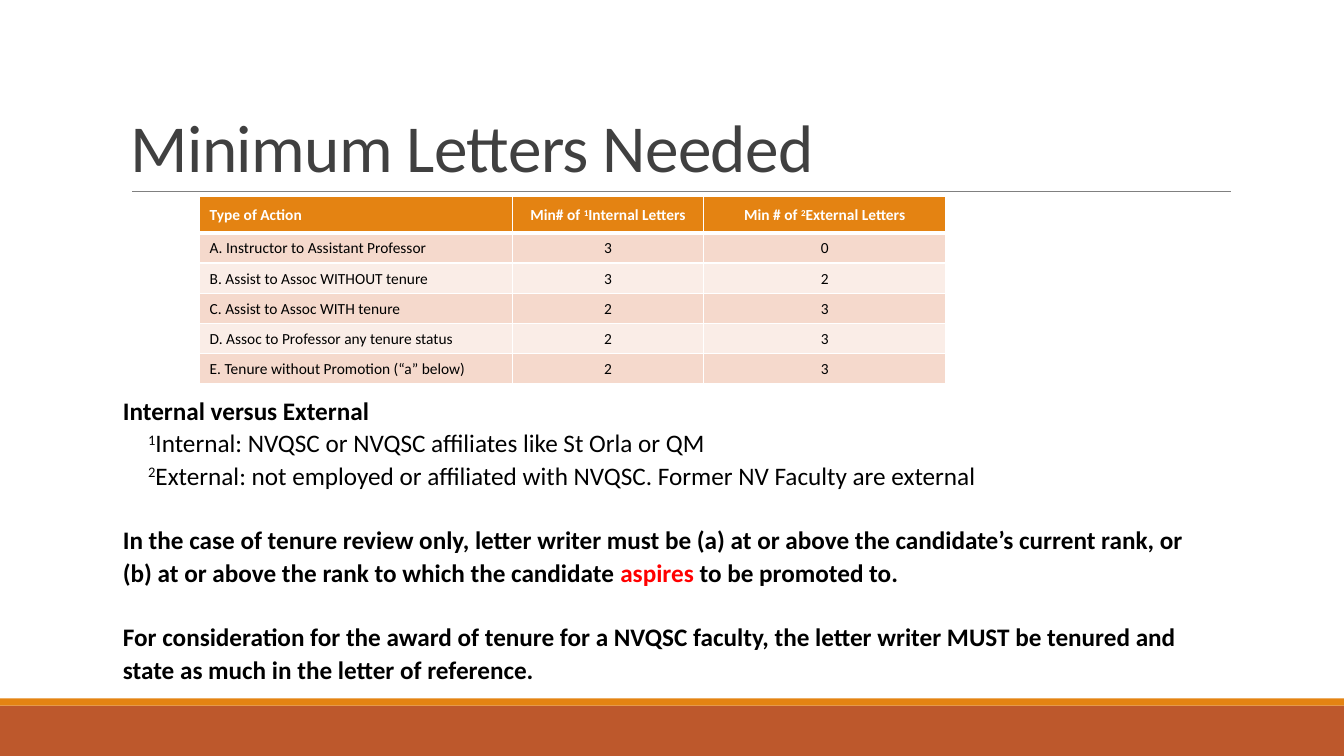
from lxml.etree import SubElement
from pptx import Presentation
from pptx.dml.color import RGBColor
from pptx.enum.shapes import MSO_CONNECTOR, MSO_SHAPE
from pptx.enum.text import MSO_ANCHOR, PP_ALIGN
from pptx.oxml.ns import qn
from pptx.util import Inches, Pt

FONT = "Calibri"
BLACK = RGBColor(0x00, 0x00, 0x00)
WHITE = RGBColor(0xFF, 0xFF, 0xFF)
RED = RGBColor(0xFF, 0x00, 0x00)
GRAY = RGBColor(0x80, 0x80, 0x80)
CHARCOAL = RGBColor(0x40, 0x40, 0x40)
ORANGE = RGBColor(0xE4, 0x83, 0x12)
RUST = RGBColor(0xBD, 0x58, 0x2C)
BANDS = (RGBColor(0xF5, 0xD9, 0xCC), RGBColor(0xFA, 0xED, 0xE7))

# Content: a run is (text, style), style being "", "super" or "red"
TITLE = "Minimum Letters Needed"
HEADER = [
    [("Type of Action", "")],
    [("Min# of ", ""), ("1", "super"), ("Internal Letters", "")],
    [("Min # of ", ""), ("2", "super"), ("External Letters", "")],
]
ACTIONS = [
    ("A. Instructor to Assistant Professor", "3", "0"),
    ("B. Assist to Assoc WITHOUT tenure", "3", "2"),
    ("C. Assist to Assoc WITH tenure", "2", "3"),
    ("D. Assoc to Professor any tenure status", "2", "3"),
    ("E. Tenure without Promotion (“a” below)", "2", "3"),
]
# Notes: (runs, bold, left indent in inches, space before in points)
SECTION_GAP = 23.2
NOTES = [
    ([("Internal versus External", "")], True, 0, 0),
    ([("1", "super"), ("Internal: NVQSC or NVQSC affiliates like St Orla or QM", "")],
     False, 0.25, 0),
    ([("2", "super"),
      ("External: not employed or affiliated with NVQSC. Former NV Faculty are external", "")],
     False, 0.25, 0),
    ([("In the case of tenure review only, letter writer must be (a) at or above "
       "the candidate’s current rank, or", "")], True, 0, SECTION_GAP),
    ([("(b) at or above the rank to which the candidate ", ""), ("aspires ", "red"),
      ("to be promoted to.", "")], True, 0, 0),
    ([("For consideration for the award of tenure for a NVQSC faculty, the letter writer "
       "MUST be tenured and state as much in the letter of reference.", "")],
     True, 0, SECTION_GAP),
]

# Layout in inches
WIDTH, HEIGHT = 13.33, 7.5
COLUMN_WIDTHS = (3.1, 1.9, 2.4)
HEADER_HEIGHT, ROW_HEIGHT = 0.36, 0.3
FOOTER_BANDS = [(7, 0.5, RUST), (6.93, 0.07, ORANGE)]


def add_runs(paragraph, runs, size, color, bold=False):
    for text, style in runs:
        run = paragraph.add_run()
        run.text = text
        run.font.name = FONT
        run.font.size = Pt(size)
        run.font.bold = bold
        run.font.color.rgb = RED if style == "red" else color
        if style == "super":
            run.font._element.set("baseline", "30000")


def add_text_frame(slide, left, top, width, height, anchor):
    box = slide.shapes.add_textbox(Inches(left), Inches(top), Inches(width), Inches(height))
    box.text_frame.word_wrap = True
    box.text_frame.vertical_anchor = anchor
    return box.text_frame


def add_border(cell, side, points):
    line = SubElement(cell._tc.get_or_add_tcPr(), qn(f"a:ln{side}"), w=str(Pt(points)))
    fill = SubElement(line, qn("a:solidFill"))
    SubElement(fill, qn("a:srgbClr"), val=str(WHITE))


def fill_cell(cell, runs, row, column):
    is_header = row == 0
    for side in "LRTB":
        heavy = (is_header and side == "B") or (row == 1 and side == "T")
        add_border(cell, side, 3 if heavy else 1)
    cell.fill.solid()
    cell.fill.fore_color.rgb = ORANGE if is_header else BANDS[(row - 1) % 2]
    cell.vertical_anchor = MSO_ANCHOR.MIDDLE
    paragraph = cell.text_frame.paragraphs[0]
    paragraph.alignment = PP_ALIGN.CENTER if column else PP_ALIGN.LEFT
    paragraph.line_spacing = 1.07
    add_runs(paragraph, runs, 11, WHITE if is_header else BLACK, is_header)


def main():
    presentation = Presentation()
    presentation.slide_width = Inches(WIDTH)
    presentation.slide_height = Inches(HEIGHT)
    slide = presentation.slides.add_slide(presentation.slide_layouts[6])

    # Footer bands
    for top, height, color in FOOTER_BANDS:
        band = slide.shapes.add_shape(
            MSO_SHAPE.RECTANGLE, 0, Inches(top), Inches(WIDTH), Inches(height))
        band.shadow.inherit = False
        band.fill.solid()
        band.fill.fore_color.rgb = color
        band.line.fill.background()

    # Title and its rule
    rule = slide.shapes.add_connector(
        MSO_CONNECTOR.STRAIGHT, Inches(1.31), Inches(1.9), Inches(12.21), Inches(1.9))
    rule.line.color.rgb = GRAY
    rule.line.width = Pt(0.5)
    SubElement(rule._element.spPr, qn("a:effectLst"))
    title = add_text_frame(slide, 1.2, 0.31, 11, 1.59, MSO_ANCHOR.BOTTOM).paragraphs[0]
    title.line_spacing = 0.85
    add_runs(title, [(TITLE, "")], 48, CHARCOAL)
    title.runs[0].font._element.set("spc", "-50")

    # Table of letters
    rows = [HEADER] + [[[(text, "")] for text in action] for action in ACTIONS]
    table_height = HEADER_HEIGHT + ROW_HEIGHT * len(ACTIONS)
    table = slide.shapes.add_table(
        len(rows), len(COLUMN_WIDTHS), Inches(1.98), Inches(1.95),
        Inches(sum(COLUMN_WIDTHS)), Inches(table_height)).table
    for column, width in zip(table.columns, COLUMN_WIDTHS):
        column.width = Inches(width)
    for row_index, cells in enumerate(rows):
        table.rows[row_index].height = Inches(ROW_HEIGHT if row_index else HEADER_HEIGHT)
        for column_index, runs in enumerate(cells):
            fill_cell(table.cell(row_index, column_index), runs, row_index, column_index)

    # Notes below the table
    frame = add_text_frame(slide, 1.12, 3.85, 11.08, 3.02, MSO_ANCHOR.TOP)
    for index, (runs, bold, indent, gap) in enumerate(NOTES):
        paragraph = frame.add_paragraph() if index else frame.paragraphs[0]
        paragraph.line_spacing = 1.07
        paragraph.space_before = Pt(gap)
        paragraph._p.get_or_add_pPr().set("marL", str(Inches(indent)))
        add_runs(paragraph, runs, 18, BLACK, bold)

    presentation.save("out.pptx")


if __name__ == "__main__":
    main()
